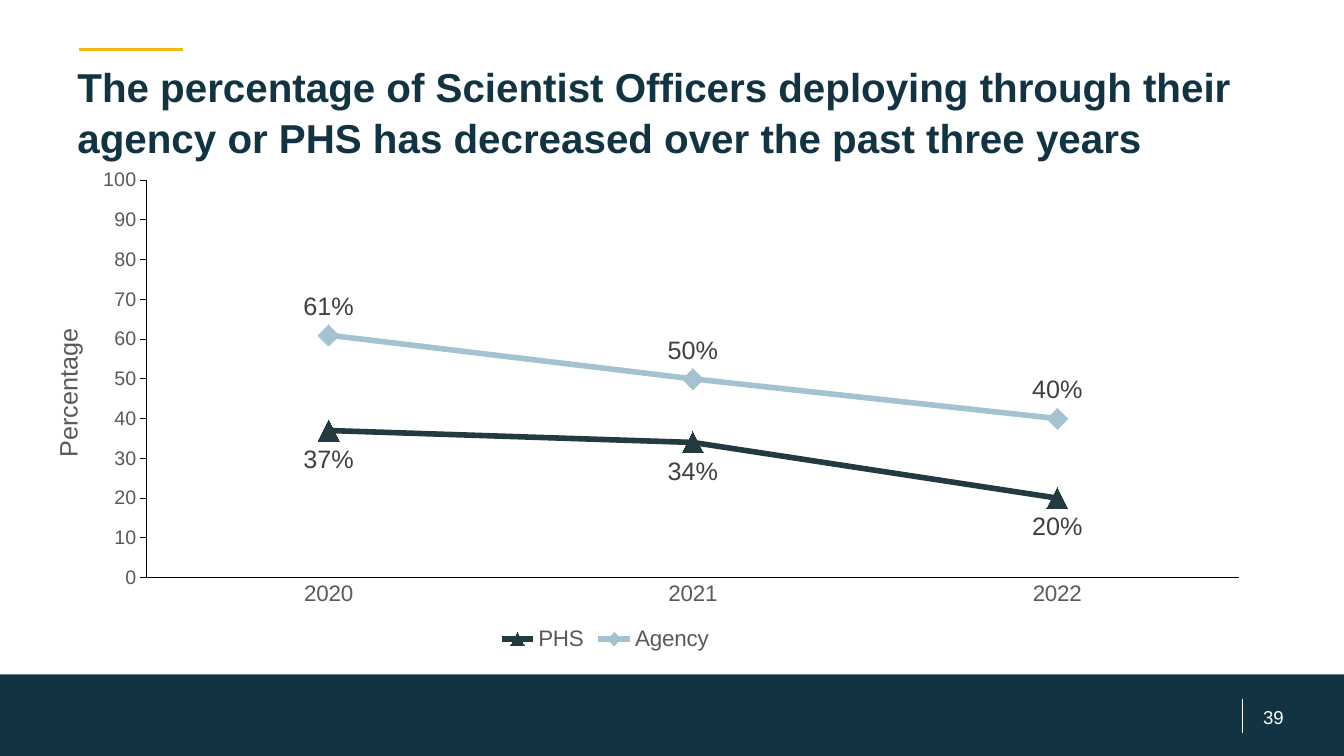
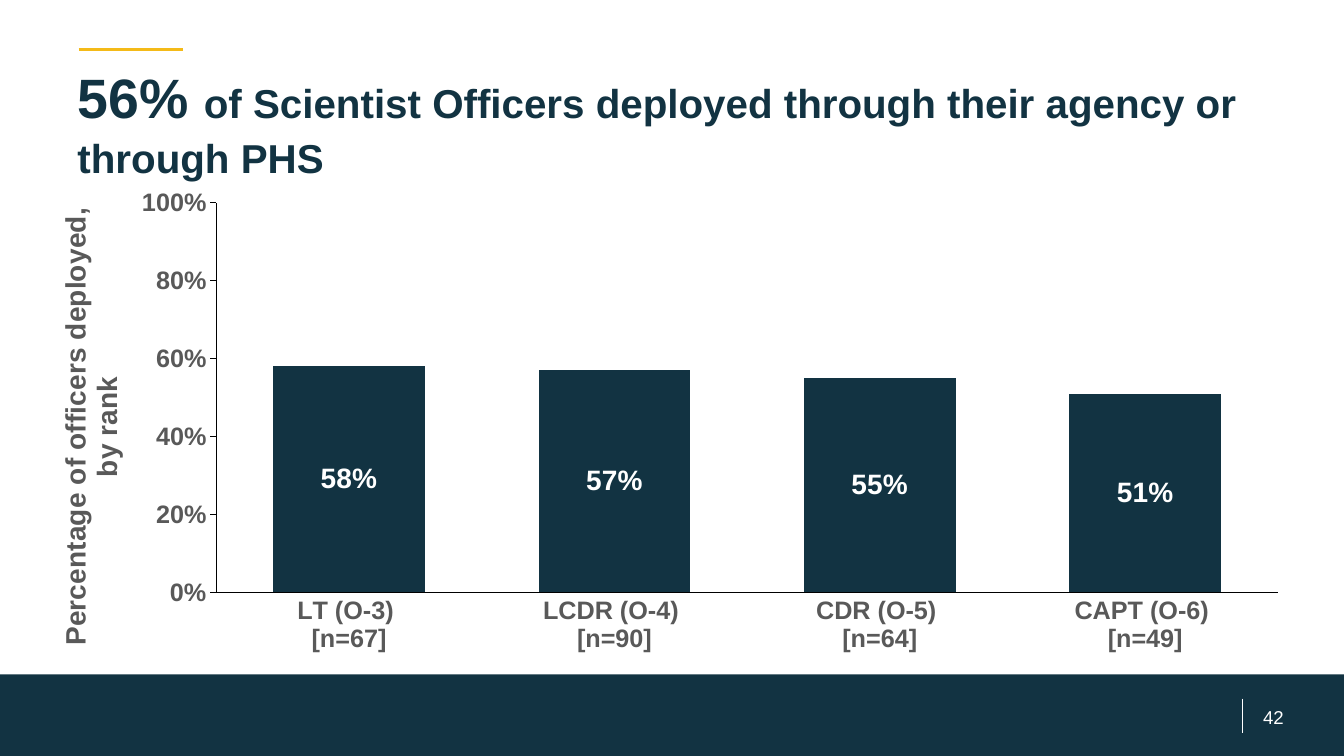
import pptx
import pptx.chart.data
import pptx.dml.color
import pptx.enum.chart
import pptx.enum.shapes
import pptx.enum.text
import pptx.oxml
import pptx.oxml.ns
import pptx.util

Inches, Pt = pptx.util.Inches, pptx.util.Pt
qn = pptx.oxml.ns.qn
XL = pptx.enum.chart

COLORS = {
    "navy": "123342",
    "gold": "F4BA18",
    "white": "FFFFFF",
    "black": "000000",
    "axis": "595959",
    "label": "404040",
    "phs": "243A43",
    "agency": "A4C2CF",
}
FONT = "Arial"
SLIDE_W, SLIDE_H = 13.33, 7.5
BAND_BOX = (0, 6.69, SLIDE_W, 0.81)
TITLE_BOX = (0.67, 0.53, 12, 0.97)


def rgb(name):
    return pptx.dml.color.RGBColor.from_string(COLORS[name])


def set_format(target, formats):
    for attribute, value in formats.items():
        setattr(target, attribute, value)


def style_font(font, size, color, bold=False):
    set_format(font, {"name": FONT, "size": Pt(size), "bold": bold})
    font.color.rgb = rgb(color)


def style_line(line, color, width):
    line.color.rgb = rgb(color)
    line.width = Pt(width)


def inches(box):
    return [Inches(length) for length in box]


# Shared slide parts
def add_rule(slide, x1, y1, x2, y2, color, width):
    rule = slide.shapes.add_connector(
        pptx.enum.shapes.MSO_CONNECTOR.STRAIGHT, *inches((x1, y1, x2, y2)))
    style_line(rule.line, color, width)
    rule._element.spPr.append(pptx.oxml.parse_xml(
        f'<a:effectLst {pptx.oxml.ns.nsdecls("a")}/>'))


def add_text(slide, box, runs, frame_format, paragraph_format):
    """Each run is (text, size, color, bold)."""
    frame = slide.shapes.add_textbox(*inches(box)).text_frame
    set_format(frame, {"word_wrap": True, **frame_format})
    paragraph = frame.paragraphs[0]
    set_format(paragraph, paragraph_format)
    for text, *style in runs:
        run = paragraph.add_run()
        run.text = text
        style_font(run.font, *style)


def add_title(slide, box, pieces):
    left, top = box[:2]
    add_rule(slide, left + 0.11, top - 0.04, left + 1.15, top - 0.04, "gold", 2.5)
    add_text(slide, box, [(text, size, "navy", True) for text, size in pieces],
             {"margin_top": Inches(0.06)}, {"line_spacing": 1.06})


def add_footer(slide, box, number):
    left, top, width, height = box
    band = slide.shapes.add_shape(
        pptx.enum.shapes.MSO_SHAPE.RECTANGLE, *inches(box))
    band.shadow.inherit = False
    band.fill.solid()
    band.fill.fore_color.rgb = rgb("navy")
    band.line.fill.background()
    right = left + width
    add_text(slide, (right - 1.09, top + 0.28, 0.78, 0.28),
             [(str(number), 13.3, "white")],
             {"vertical_anchor": pptx.enum.text.MSO_ANCHOR.MIDDLE,
              "margin_left": Inches(0.13), "margin_right": Inches(0.13),
              "margin_top": Inches(0.07), "margin_bottom": Inches(0.07)},
             {"alignment": pptx.enum.text.PP_ALIGN.CENTER})
    add_rule(slide, right - 1.01, top + 0.24, right - 1.01, top + 0.58,
             "white", 0.75)


def add_base(deck, pieces, number):
    slide = deck.slides.add_slide(deck.slide_layouts[6])
    add_footer(slide, BAND_BOX, number)
    add_title(slide, TITLE_BOX, pieces)
    return slide


# Chart helpers
def place(element, index, fractions, inner=False):
    """Give a chart part a manual layout in fractions of the chart."""
    for layout in element.findall(qn("c:layout")):
        element.remove(layout)
    target = '<c:layoutTarget val="inner"/>' if inner else ""
    modes = '<c:xMode val="edge"/><c:yMode val="edge"/>'
    sizes = "".join(f'<c:{key} val="{value}"/>'
                    for key, value in zip("xywh", fractions))
    element.insert(index, pptx.oxml.parse_xml(
        f'<c:layout {pptx.oxml.ns.nsdecls("c")}><c:manualLayout>'
        f'{target}{modes}{sizes}</c:manualLayout></c:layout>'))


def add_chart(slide, box, kind, categories, series, plot_area):
    data = pptx.chart.data.CategoryChartData()
    data.categories = categories
    for name, values in series:
        data.add_series(name, values)
    chart = slide.shapes.add_chart(kind, *inches(box), data).chart
    set_format(chart, {"has_title": False, "has_legend": False})
    style_font(chart.font, 10, "black")
    chart.plots[0].vary_by_categories = False
    place(chart._chartSpace.chart.plotArea, 0, plot_area, inner=True)
    return chart


def style_axes(chart, category_size, value_size, bold, scale, number_format):
    ticks = XL.XL_TICK_MARK
    for axis, size, mark in ((chart.category_axis, category_size, ticks.NONE),
                             (chart.value_axis, value_size, ticks.OUTSIDE)):
        set_format(axis, {"has_major_gridlines": False, "major_tick_mark": mark,
                          "minor_tick_mark": ticks.NONE})
        style_font(axis.tick_labels.font, size, "axis", bold)
        style_line(axis.format.line, "black", 0.75)
    set_format(chart.value_axis, scale)
    set_format(chart.value_axis.tick_labels,
               {"number_format": number_format, "number_format_is_linked": False})


def add_axis_title(axis, text, size, bold, position):
    title = axis.axis_title
    run = title.text_frame.paragraphs[0].add_run()
    run.text = text
    style_font(run.font, size, "axis", bold)
    body = title._element.find(".//" + qn("a:bodyPr"))
    body.set("rot", "-5400000")
    body.set("vert", "horz")
    place(title._element, 1, position)


def add_labels(series, position, size, color, bold, number_format):
    labels = series.data_labels
    set_format(labels, {"show_value": True, "position": position,
                        "number_format": number_format,
                        "number_format_is_linked": False})
    style_font(labels.font, size, color, bold)


# Line chart: deployment by year
def add_trend_chart(slide, box):
    chart = add_chart(slide, box, XL.XL_CHART_TYPE.LINE_MARKERS,
                      ["2020", "2021", "2022"],
                      [("PHS", (37, 34, 20)), ("Agency", (61, 50, 40))],
                      (0.1, 0.04, 0.88, 0.8))
    style_axes(chart, 16, 14, False,
               {"minimum_scale": 0, "maximum_scale": 100, "major_unit": 10}, "0")
    add_axis_title(chart.value_axis, "Percentage", 18, False, (0.02, 0.33))
    looks = (("phs", XL.XL_MARKER_STYLE.TRIANGLE, XL.XL_LABEL_POSITION.BELOW),
             ("agency", XL.XL_MARKER_STYLE.DIAMOND, XL.XL_LABEL_POSITION.ABOVE))
    for series, (color, marker, position) in zip(chart.plots[0].series, looks):
        series.smooth = False
        style_line(series.format.line, color, 4)
        set_format(series.marker, {"style": marker, "size": 15})
        series.marker.format.fill.solid()
        series.marker.format.fill.fore_color.rgb = rgb(color)
        series.marker.format.line.fill.background()
        add_labels(series, position, 18, "label", False, '0"%"')
    chart.has_legend = True
    set_format(chart.legend, {"position": XL.XL_LEGEND_POSITION.BOTTOM,
                              "include_in_layout": False})
    style_font(chart.legend.font, 16, "axis")
    place(chart.legend._element, 1, (0.38, 0.93))


# Column chart: deployment by rank
def add_rank_chart(slide, box):
    chart = add_chart(slide, box, XL.XL_CHART_TYPE.COLUMN_CLUSTERED,
                      ["LT (O-3) \n[n=67]", "LCDR (O-4) \n[n=90]",
                       "CDR (O-5) \n[n=64]", "CAPT (O-6) \n[n=49]"],
                      [("Series 1", (0.58, 0.57, 0.55, 0.51))],
                      (0.16, 0.06, 0.84, 0.66))
    style_axes(chart, 18, 18, True,
               {"minimum_scale": 0, "maximum_scale": 1, "major_unit": 0.2}, "0%")
    add_axis_title(chart.value_axis, "Percentage of officers deployed, by rank",
                   20, True, (0.03, 0.06))
    chart.plots[0].gap_width = 75
    ranks = chart.plots[0].series[0]
    ranks.invert_if_negative = False
    ranks.format.fill.solid()
    ranks.format.fill.fore_color.rgb = rgb("navy")
    add_labels(ranks, XL.XL_LABEL_POSITION.CENTER, 20, "white", True, "0%")


def main():
    deck = pptx.Presentation()
    set_format(deck, {"slide_width": Inches(SLIDE_W),
                      "slide_height": Inches(SLIDE_H)})
    trend = add_base(deck, [("The percentage of Scientist Officers deploying "
                             "through their agency or PHS has decreased over "
                             "the past three years", 28.8)], 39)
    add_trend_chart(trend, (0.22, 1.59, 12.32, 4.93))
    rank = add_base(deck, [("56% ", 39.6),
                           ("of Scientist Officers deployed through their "
                            "agency or through PHS", 28.8)], 42)
    add_rank_chart(rank, (0.14, 1.66, 12.54, 5.86))
    deck.save("out.pptx")


if __name__ == "__main__":
    main()
